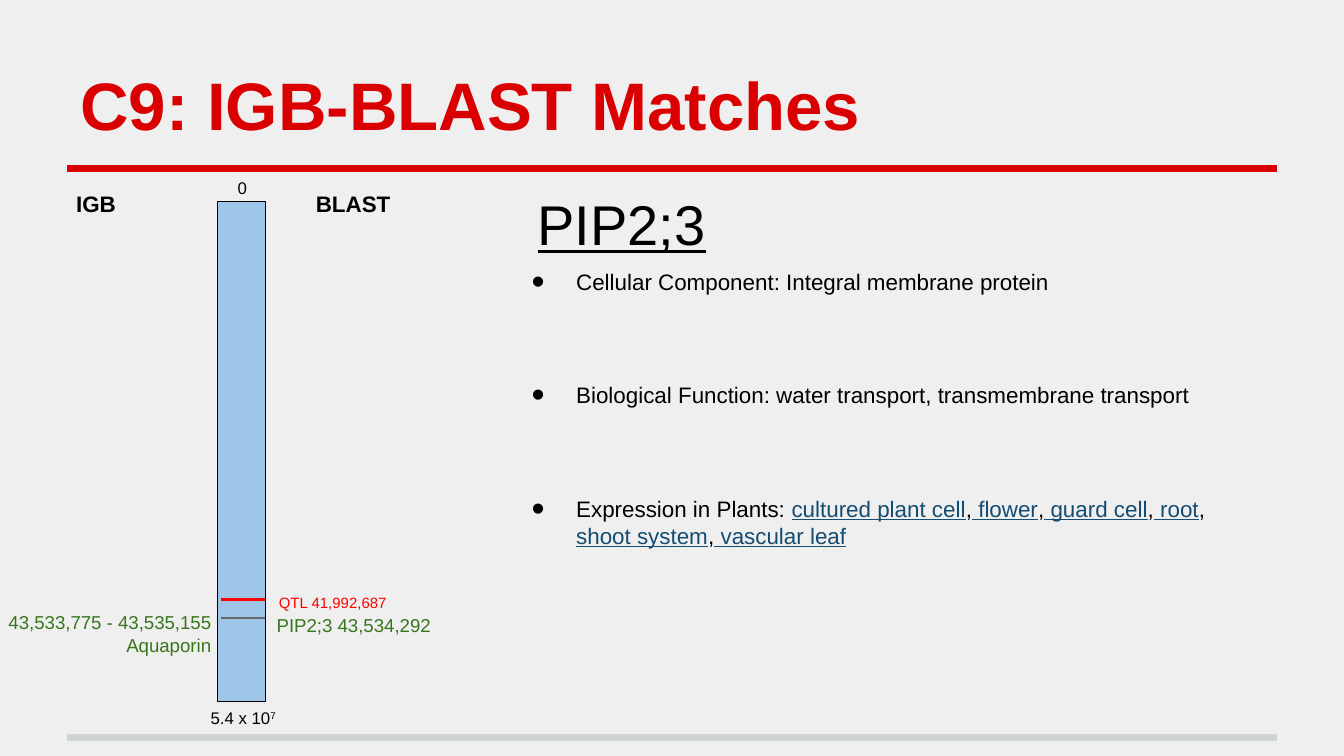
from dataclasses import dataclass

from lxml.etree import SubElement
from pptx import Presentation
from pptx.dml.color import RGBColor
from pptx.enum.shapes import MSO_CONNECTOR as Connector, MSO_SHAPE as Shape
from pptx.enum.text import MSO_ANCHOR as Anchor, MSO_AUTO_SIZE as AutoSize, PP_ALIGN as Align
from pptx.oxml.ns import qn
from pptx.util import Cm, Pt

BACKGROUND = RGBColor(0xEF, 0xEF, 0xEF)
RULE_RED = RGBColor(0xDA, 0x00, 0x02)
RULE_GRAY = RGBColor(0xCF, 0xD4, 0xD4)
BLACK = RGBColor(0x00, 0x00, 0x00)
LINK_BLUE = RGBColor(0x14, 0x4C, 0x72)
BAR_BLUE = RGBColor(0x9F, 0xC5, 0xE8)
QTL_RED = RGBColor(0xFF, 0x00, 0x00)
MARK_GRAY = RGBColor(0x66, 0x66, 0x66)
MATCH_GREEN = RGBColor(0x38, 0x76, 0x1D)

FONT = "Arial"
INSET = Cm(0.25)


@dataclass(frozen=True)
class Rule:
    """A horizontal line, in centimetres, with its width in points."""
    left: float
    right: float
    y: float
    color: RGBColor
    width: float


@dataclass(frozen=True)
class Label:
    """A text box, in centimetres, with one paragraph per line."""
    left: float
    top: float
    width: float
    height: float
    lines: tuple[str, ...]
    size: float
    color: RGBColor = BLACK
    bold: bool = False
    align: Align = Align.LEFT
    spacing: float = 1.0
    superscript: str = ""


RULES = (
    Rule(1.27, 24.13, 13.94, RULE_GRAY, 4),
    Rule(1.27, 24.13, 3.18, RULE_RED, 4),
)
MARKS = (
    Rule(4.17, 5, 11.33, QTL_RED, 1.5),
    Rule(4.17, 5, 11.68, MARK_GRAY, 1.5),
)
LABELS = (
    Label(4.24, 3.12, 1.27, 0.48, ("0",), 9),
    Label(3.73, 13.13, 2.69, 0.53, ("5.4 x 10",), 9, superscript="7"),
    Label(4.11, 10.92, 3.45, 0.81, ("QTL 41,992,687",), 8, QTL_RED,
          align=Align.RIGHT, spacing=1.15),
    Label(-0.23, 11.3, 4.47, 0.81, ("43,533,775 - 43,535,155", "Aquaporin"), 10,
          MATCH_GREEN, align=Align.RIGHT),
    Label(4.98, 11.35, 3.78, 0.81, ("PIP2;3 43,534,292",), 10, MATCH_GREEN),
    Label(1.19, 3.35, 2.31, 0.94, ("IGB",), 12, bold=True),
    Label(5.72, 3.35, 2.31, 0.94, ("BLAST",), 12, bold=True),
)
FACTS = (
    "Cellular Component: Integral membrane protein",
    "Biological Function: water transport, transmembrane transport",
    "Expression in Plants: ",
)
TISSUES = ("cultured plant cell", " flower", " guard cell", " root",
           " shoot system", " vascular leaf")


def set_font(font, size: float, color: RGBColor, bold: bool = False) -> None:
    font.name = FONT
    font.size = Pt(size)
    font.color.rgb = color
    font.bold = bold


def prepare_frame(frame) -> None:
    frame.word_wrap = True
    frame.auto_size = AutoSize.NONE
    frame.margin_left = frame.margin_right = INSET
    frame.margin_top = frame.margin_bottom = INSET


def place(shape, left: float, top: float, width: float, height: float) -> None:
    shape.left, shape.top = Cm(left), Cm(top)
    shape.width, shape.height = Cm(width), Cm(height)


def draw_rule(slide, rule: Rule) -> None:
    line = slide.shapes.add_connector(
        Connector.STRAIGHT, Cm(rule.left), Cm(rule.y), Cm(rule.right), Cm(rule.y))
    line.line.color.rgb = rule.color
    line.line.width = Pt(rule.width)
    SubElement(line._element.spPr, qn("a:effectLst"))


def draw_label(slide, label: Label) -> None:
    frame = slide.shapes.add_textbox(
        Cm(label.left), Cm(label.top), Cm(label.width), Cm(label.height)).text_frame
    prepare_frame(frame)
    frame.text = "\n".join(label.lines)
    for paragraph in frame.paragraphs:
        paragraph.alignment = label.align
        paragraph.line_spacing = label.spacing
        set_font(paragraph.font, label.size, label.color, label.bold)
    if label.superscript:
        exponent = frame.paragraphs[-1].add_run()
        exponent.text = label.superscript
        exponent._r.get_or_add_rPr().set("baseline", "30000")


def indent(paragraph, left: float, first: float) -> None:
    properties = paragraph._p.get_or_add_pPr()
    properties.set("marL", str(Cm(left)))
    properties.set("indent", str(Cm(first)))


def add_bullet(paragraph) -> None:
    properties = paragraph._p.get_or_add_pPr()
    color = SubElement(properties, qn("a:buClr"))
    SubElement(color, qn("a:srgbClr"), val=str(BLACK))
    SubElement(properties, qn("a:buSzPct"), val="167000")
    SubElement(properties, qn("a:buFont"), typeface=FONT)
    SubElement(properties, qn("a:buChar"), char="•")


def draw_title(slide) -> None:
    title = slide.shapes.title
    place(title, 1.27, 0.58, 22.86, 2.39)
    frame = title.text_frame
    prepare_frame(frame)
    frame.vertical_anchor = Anchor.BOTTOM
    frame.text = "C9: IGB-BLAST Matches"
    heading = frame.paragraphs[0]
    heading.alignment = Align.LEFT
    set_font(heading.font, 36, RULE_RED, bold=True)


def draw_gene_facts(slide) -> None:
    frame = slide.shapes.add_textbox(Cm(9.37), Cm(3.33), Cm(14.76), Cm(10.34)).text_frame
    prepare_frame(frame)
    gene = frame.paragraphs[0]
    gene.text = "PIP2;3"
    gene.space_before = Pt(6)
    indent(gene, 0.97, -0.43)
    set_font(gene.font, 30, BLACK)
    gene.font.underline = True

    for number, text in enumerate(FACTS):
        fact = frame.add_paragraph()
        fact.space_before = Pt(46.5 if number else 6)
        indent(fact, 1.27, -0.84)
        add_bullet(fact)
        set_font(fact.font, 12, BLACK)
        fact.add_run().text = text

    for number, tissue in enumerate(TISSUES):
        if number:
            fact.add_run().text = ","
        link = fact.add_run()
        link.text = tissue
        link.font.color.rgb = LINK_BLUE
        link.font.underline = True


def draw_chromosome(slide) -> None:
    bar = slide.shapes.add_shape(Shape.RECTANGLE, Cm(4.11), Cm(3.81), Cm(0.91), Cm(9.45))
    bar.shadow.inherit = False
    bar.fill.solid()
    bar.fill.fore_color.rgb = BAR_BLUE
    bar.line.color.rgb = BLACK
    bar.line.width = Pt(0.75)
    for mark in MARKS:
        draw_rule(slide, mark)


def main() -> None:
    deck = Presentation()
    deck.slide_width, deck.slide_height = Cm(25.4), Cm(14.29)
    slide = deck.slides.add_slide(deck.slide_layouts.get_by_name("Title Only"))
    slide.background.fill.solid()
    slide.background.fill.fore_color.rgb = BACKGROUND
    for rule in RULES:
        draw_rule(slide, rule)
    draw_title(slide)
    draw_gene_facts(slide)
    draw_chromosome(slide)
    for label in LABELS:
        draw_label(slide, label)
    deck.save("out.pptx")


if __name__ == "__main__":
    main()
